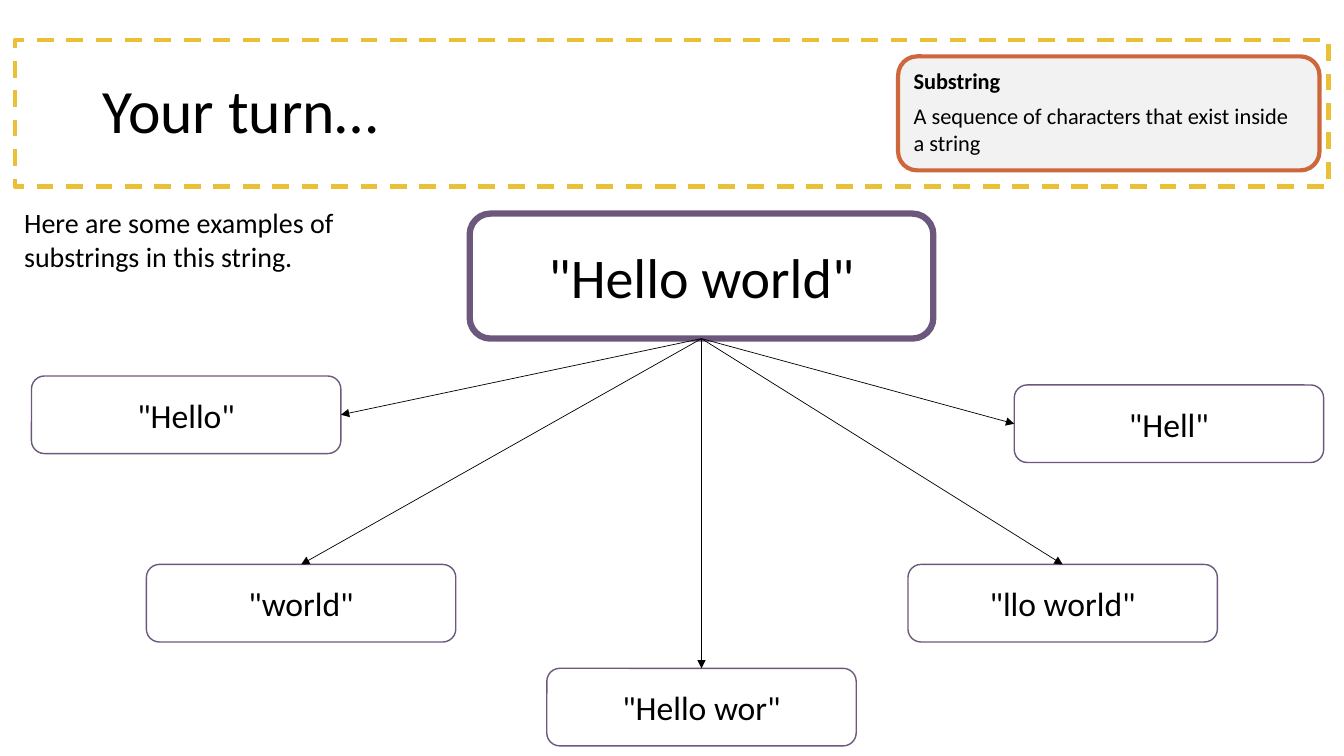
from dataclasses import dataclass

from lxml.etree import SubElement
from pptx import Presentation
from pptx.dml.color import RGBColor
from pptx.enum.dml import MSO_LINE
from pptx.enum.shapes import MSO_CONNECTOR, MSO_SHAPE
from pptx.enum.text import MSO_ANCHOR, PP_ALIGN
from pptx.oxml.ns import qn
from pptx.shapes.autoshape import Shape
from pptx.slide import Slide
from pptx.text.text import TextFrame
from pptx.util import Pt

TOP, LEFT, BOTTOM = 0, 1, 2
RIGHT = 3


@dataclass(frozen=True)
class Theme:
    font: str = "Calibri"
    ink: str = "000000"
    paper: str = "FFFFFF"
    panel: str = "F2F2F2"
    gold: str = "EAC036"
    orange: str = "CE673B"
    purple: str = "6C587C"
    title_size: float = 44
    string_size: float = 40
    substring_size: float = 24
    intro_size: float = 20
    definition_size: float = 16


@dataclass(frozen=True)
class Frame:
    left: float
    top: float
    width: float
    height: float

    def lengths(self) -> tuple[Pt, Pt, Pt, Pt]:
        return Pt(self.left), Pt(self.top), Pt(self.width), Pt(self.height)


@dataclass(frozen=True)
class Substring:
    text: str
    left: float
    top: float
    side: int


THEME = Theme()
BANNER = Frame(10.8, 28.8, 938.2, 104.4)
TITLE = Frame(66.2, 28.8, 828, 104.4)
DEFINITION = Frame(641.5, 40.3, 301, 81.4)
INTRO = Frame(10.1, 143.3, 288.7, 55.4)
STRING = Frame(335.5, 152.6, 331.2, 89.3)
SUBSTRING_WIDTH, SUBSTRING_HEIGHT = 221, 55.4
SUBSTRINGS = (
    Substring('"Hello"', 22.5, 268.6, RIGHT),
    Substring('"world"', 104.6, 403.2, TOP),
    Substring('"Hello wor"', 390.6, 477.4, TOP),
    Substring('"Hell"', 724.5, 275, LEFT),
    Substring('"llo world"', 648.6, 403.2, TOP),
)


def write(text_frame: TextFrame, text: str, *, size: float, bold: bool = False,
          align: PP_ALIGN = PP_ALIGN.LEFT, anchor: MSO_ANCHOR = MSO_ANCHOR.TOP,
          space_after: float = 0, line_spacing: float = 1.0) -> None:
    text_frame.word_wrap = True
    text_frame.vertical_anchor = anchor
    para = text_frame.paragraphs[0] if not text_frame.text else text_frame.add_paragraph()
    para.alignment = align
    para.space_before = Pt(0)
    para.space_after = Pt(space_after)
    para.line_spacing = line_spacing
    span = para.add_run()
    span.text = text
    span.font.name = THEME.font
    span.font.size = Pt(size)
    span.font.bold = bold
    span.font.color.rgb = RGBColor.from_string(THEME.ink)


def add_box(page: Slide, frame: Frame, *, line: str, weight: float, fill: str | None = None,
            kind: MSO_SHAPE = MSO_SHAPE.ROUNDED_RECTANGLE) -> Shape:
    box = page.shapes.add_shape(kind, *frame.lengths())
    box.shadow.inherit = False
    if fill is None:
        box.fill.background()
    else:
        box.fill.solid()
        box.fill.fore_color.rgb = RGBColor.from_string(fill)
    box.line.color.rgb = RGBColor.from_string(line)
    box.line.width = Pt(weight)
    return box


def add_string_box(page: Slide, frame: Frame, text: str, *, size: float, weight: float) -> Shape:
    box = add_box(page, frame, line=THEME.purple, weight=weight, fill=THEME.paper)
    write(box.text_frame, text, size=size, align=PP_ALIGN.CENTER, anchor=MSO_ANCHOR.MIDDLE)
    return box


def add_arrow(page: Slide, source: Shape, target: Shape, side: int) -> None:
    arrow = page.shapes.add_connector(MSO_CONNECTOR.STRAIGHT, Pt(0), Pt(0), Pt(0), Pt(0))
    arrow.begin_connect(source, BOTTOM)
    arrow.end_connect(target, side)
    arrow.line.color.rgb = RGBColor.from_string(THEME.ink)
    arrow.line.width = Pt(0.5)
    SubElement(arrow.line._get_or_add_ln(), qn("a:tailEnd"), type="triangle")
    SubElement(arrow._element.spPr, qn("a:effectLst"))


def add_heading(page: Slide) -> None:
    banner = add_box(page, BANNER, line=THEME.gold, weight=3, kind=MSO_SHAPE.RECTANGLE)
    banner.line.dash_style = MSO_LINE.DASH
    title = page.shapes.title
    title.left, title.top, title.width, title.height = TITLE.lengths()
    write(title.text_frame, "Your turn…", size=THEME.title_size,
          anchor=MSO_ANCHOR.MIDDLE, line_spacing=0.9)
    definition = add_box(page, DEFINITION, line=THEME.orange, weight=3, fill=THEME.panel)
    write(definition.text_frame, "Substring", size=THEME.definition_size, bold=True, space_after=6)
    write(definition.text_frame, "A sequence of characters that exist inside a string",
          size=THEME.definition_size)


def add_diagram(page: Slide) -> None:
    intro = page.shapes.add_textbox(*INTRO.lengths())
    write(intro.text_frame, "Here are some examples of substrings in this string.",
          size=THEME.intro_size)
    string_box = add_string_box(page, STRING, '"Hello world"', size=THEME.string_size, weight=4.5)
    substring_boxes = [
        add_string_box(page, Frame(item.left, item.top, SUBSTRING_WIDTH, SUBSTRING_HEIGHT),
                       item.text, size=THEME.substring_size, weight=1)
        for item in SUBSTRINGS
    ]
    for item, box in zip(SUBSTRINGS, substring_boxes):
        add_arrow(page, string_box, box, item.side)


def main() -> None:
    deck = Presentation()
    deck.slide_width, deck.slide_height = Pt(960), Pt(540)
    page = deck.slides.add_slide(deck.slide_layouts.get_by_name("Title Only"))
    add_heading(page)
    add_diagram(page)
    deck.save("out.pptx")


if __name__ == "__main__":
    main()
